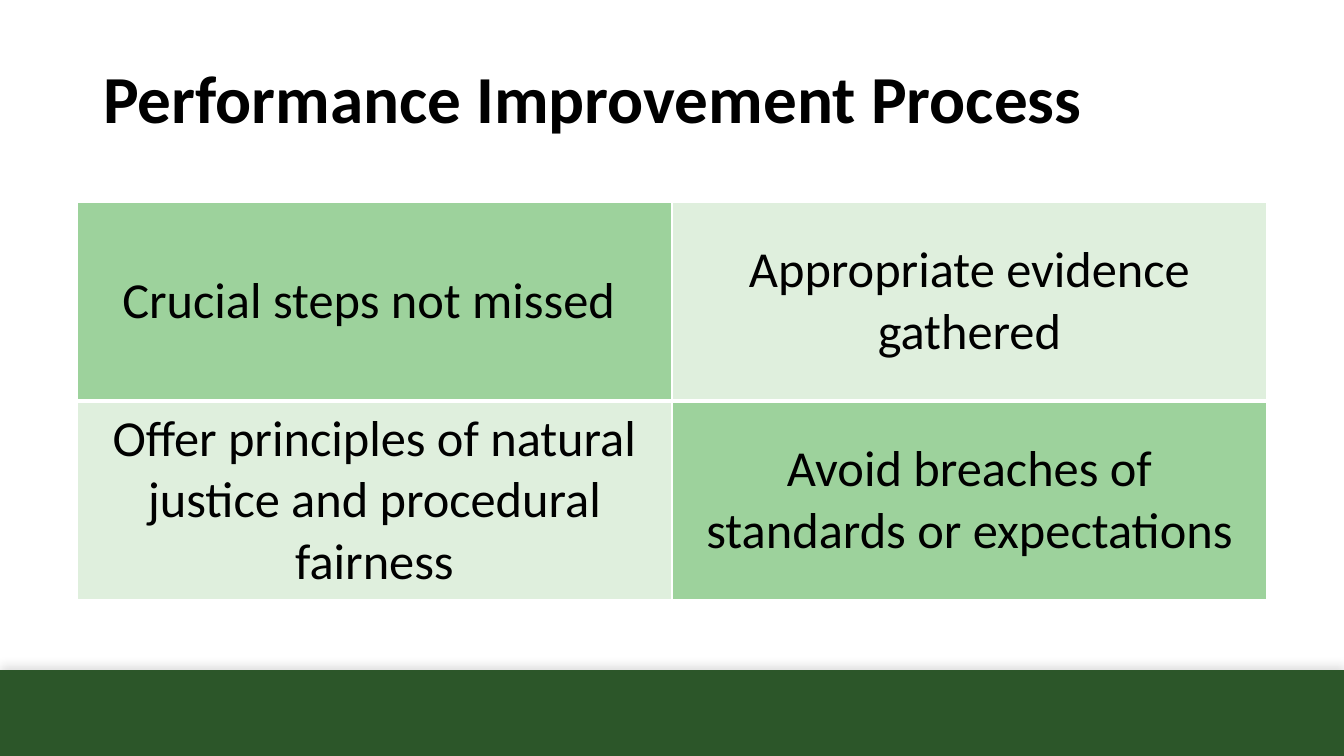
from lxml import etree
from pptx import Presentation
from pptx.dml.color import RGBColor
from pptx.enum.shapes import MSO_SHAPE
from pptx.enum.text import MSO_ANCHOR, PP_ALIGN
from pptx.oxml import parse_xml
from pptx.oxml.ns import nsdecls, qn
from pptx.util import Pt

# Content
HEADING = "Performance Improvement Process"
BENEFITS = [
    ["Crucial steps not missed ", "Appropriate evidence gathered"],
    ["Offer principles of natural justice and procedural fairness",
     "Avoid breaches of standards or expectations"],
]

# Look
FONT = "Calibri"
BLACK = RGBColor(0x00, 0x00, 0x00)
WHITE = RGBColor(0xFF, 0xFF, 0xFF)
DARK_GREEN = RGBColor(0x2C, 0x56, 0x29)
MID_GREEN = RGBColor(0x9D, 0xD2, 0x9C)
PALE_GREEN = RGBColor(0xDF, 0xEF, 0xDD)
RECTANGLE = MSO_SHAPE.RECTANGLE
MIDDLE = MSO_ANCHOR.MIDDLE
CENTER, LEFT = PP_ALIGN.CENTER, PP_ALIGN.LEFT

# Geometry in px
SLIDE_W, SLIDE_H = 1344, 756
BAND_TOP = 670
HEADING_BOX = (93, 29, 1159, 146)
GRID_LEFT, GRID_TOP = 77, 202
CELL_W, CELL_H = 595, 199
EMU_PER_PX = 12192000 / SLIDE_W


def px(length):
    return round(length * EMU_PER_PX)


def style_text(paragraph, size, align, bold=False):
    paragraph.alignment = align
    font = paragraph.font
    font.name, font.size, font.bold = FONT, Pt(size), bold
    font.color.rgb = BLACK


def add_borders(cell, widths):
    """Put white lines of the given point widths round a cell."""
    properties = cell._tc.get_or_add_tcPr()
    for position, (side, width) in enumerate(widths.items()):
        line = etree.Element(qn(f"a:ln{side}"), w=str(Pt(width)))
        fill = etree.SubElement(line, qn("a:solidFill"))
        etree.SubElement(fill, qn("a:srgbClr"), val=str(WHITE))
        properties.insert(position, line)


prs = Presentation()
prs.slide_width, prs.slide_height = px(SLIDE_W), px(SLIDE_H)
slide = prs.slides.add_slide(prs.slide_layouts[5])

# Footer band with a soft shadow above it
band = slide.shapes.add_shape(
    RECTANGLE, 0, px(BAND_TOP), px(SLIDE_W), px(SLIDE_H - BAND_TOP))
band.fill.solid()
band.fill.fore_color.rgb = DARK_GREEN
band.line.fill.background()
band._element.spPr.append(parse_xml(
    f'<a:effectLst {nsdecls("a")}>'
    f'<a:outerShdw blurRad="{Pt(7)}" dist="{Pt(3)}" dir="16200000" rotWithShape="0">'
    '<a:srgbClr val="000000"><a:alpha val="13000"/></a:srgbClr>'
    '</a:outerShdw></a:effectLst>'))

# Heading
heading = slide.shapes.title
heading.left, heading.top, heading.width, heading.height = map(px, HEADING_BOX)
heading.text_frame.text = HEADING
heading.text_frame.vertical_anchor = MIDDLE
heading_line = heading.text_frame.paragraphs[0]
heading_line.line_spacing = 0.9
style_text(heading_line, 48, LEFT, bold=True)

# Checkerboard of benefits
row_count, column_count = len(BENEFITS), len(BENEFITS[0])
grid = slide.shapes.add_table(
    row_count, column_count, px(GRID_LEFT), px(GRID_TOP),
    px(CELL_W * column_count), px(CELL_H * row_count)).table
grid.first_row = grid.horz_banding = False
for r, benefits in enumerate(BENEFITS):
    for c, benefit in enumerate(benefits):
        cell = grid.cell(r, c)
        cell.text = benefit
        cell.vertical_anchor = MIDDLE
        style_text(cell.text_frame.paragraphs[0], 36, CENTER)
        cell.fill.solid()
        cell.fill.fore_color.rgb = PALE_GREEN if (r + c) % 2 else MID_GREEN
        # The line between the rows is heavier
        add_borders(cell, {"L": 1, "R": 1, "T": 3 if r else 1, "B": 1 if r else 3})

prs.save("out.pptx")
